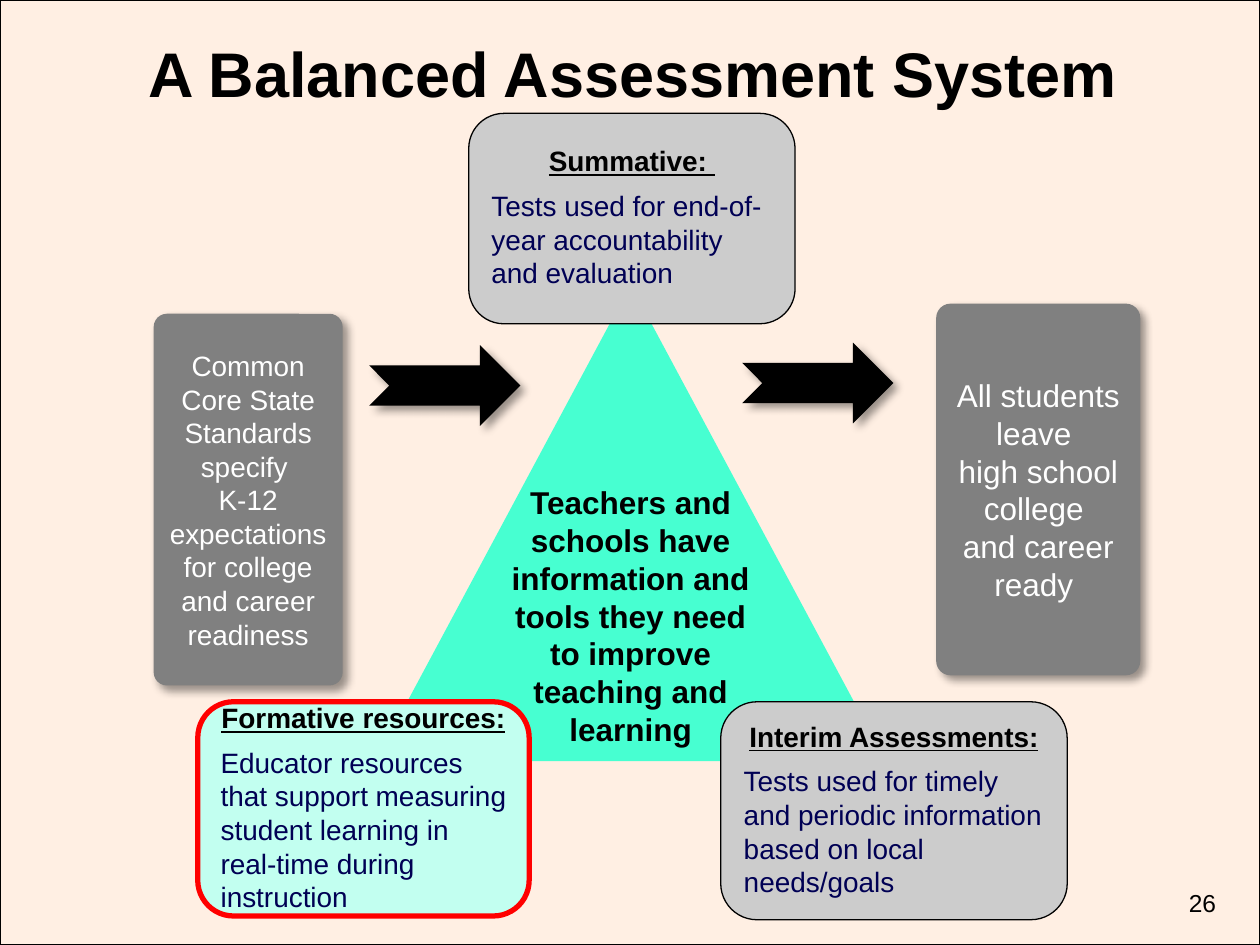
"""Build the balanced assessment system slide."""
from dataclasses import dataclass
from typing import Optional

from lxml.etree import SubElement
from pptx import Presentation
from pptx.dml.color import RGBColor
from pptx.enum.shapes import MSO_SHAPE as Preset
from pptx.enum.text import MSO_ANCHOR as Anchor, PP_ALIGN as Align
from pptx.oxml.ns import qn
from pptx.util import Inches, Pt

BLACK = RGBColor(0x00, 0x00, 0x00)
WHITE = RGBColor(0xFF, 0xFF, 0xFF)
CREAM = RGBColor(0xFF, 0xEF, 0xE3)
GRAY = RGBColor(0x80, 0x80, 0x80)
SILVER = RGBColor(0xCC, 0xCC, 0xCC)
NAVY = RGBColor(0x00, 0x00, 0x54)
TURQUOISE = RGBColor(0x47, 0xFF, 0xD1)
MINT = RGBColor(0xC2, 0xFF, 0xF0)
RED = RGBColor(0xFF, 0x00, 0x00)


@dataclass(frozen=True)
class Box:
    left: float
    top: float
    width: float
    height: float


@dataclass(frozen=True)
class GoalPanel:
    box: Box
    paragraphs: tuple[str, ...]
    size: int
    inset: tuple[float, float]


@dataclass(frozen=True)
class AssessmentCard:
    box: Box
    heading: str
    body: str
    fill: RGBColor = SILVER
    line: RGBColor = BLACK
    line_width: float = 0.75


PANELS = (
    GoalPanel(Box(1.22, 2.49, 1.5, 2.95),
              ("Common Core State Standards specify ",
               "K-12 expectations for college and career readiness"), 16, (0.05, 0.05)),
    GoalPanel(Box(7.43, 2.41, 1.62, 2.95),
              ("All students leave \vhigh school college \vand career ready ",), 18, (0.1, 0.05)),
)
ARROWS = (Box(2.93, 2.74, 1.2, 0.64), Box(5.89, 2.72, 1.2, 0.64))
CARDS = (
    AssessmentCard(Box(3.72, 0.9, 2.59, 1.67), "Summative: ",
                   "Tests used for end-of-year accountability and evaluation"),
    AssessmentCard(Box(5.72, 5.57, 2.75, 1.73), "Interim Assessments:",
                   "Tests used for timely and periodic information based on local needs/goals"),
    AssessmentCard(Box(1.57, 5.57, 2.63, 1.7), "Formative resources:",
                   "Educator resources that support measuring student learning "
                   "in real-time during instruction", MINT, RED, 3),
)


def lengths(box: Box) -> tuple:
    return tuple(Inches(value) for value in (box.left, box.top, box.width, box.height))


def add_shape(slide, preset, box: Box, fill: RGBColor,
              line: Optional[RGBColor] = None, line_width: float = 0.75):
    shape = slide.shapes.add_shape(preset, *lengths(box))
    shape.shadow.inherit = False
    shape.fill.solid()
    shape.fill.fore_color.rgb = fill
    if line is None:
        shape.line.fill.background()
    else:
        shape.line.color.rgb = line
        shape.line.width = Pt(line_width)
    return shape


def add_shadow(shape) -> None:
    effects = shape.element.spPr.find(qn("a:effectLst"))
    shadow = SubElement(effects, qn("a:outerShdw"), blurRad=str(Pt(5)), dist=str(Pt(4)),
                        dir="2700000", algn="tl", rotWithShape="0")
    color = SubElement(shadow, qn("a:srgbClr"), val=str(BLACK))
    SubElement(color, qn("a:alpha"), val="40000")


def set_frame(shape, anchor=Anchor.MIDDLE, inset=(0.1, 0.05), bottom: Optional[float] = None):
    frame = shape.text_frame
    frame.word_wrap = True
    frame.vertical_anchor = anchor
    frame.margin_left = frame.margin_right = Inches(inset[0])
    frame.margin_top = Inches(inset[1])
    frame.margin_bottom = Inches(inset[1] if bottom is None else bottom)
    return frame


def add_text(frame, text: str, *, size: int, color: RGBColor = BLACK, bold: bool = False,
             underline: bool = False, align=Align.CENTER,
             spacing: Optional[float] = None, after: float = 0) -> None:
    paragraph = frame.paragraphs[0]
    if paragraph.runs:
        paragraph = frame.add_paragraph()
    paragraph.text = text
    paragraph.alignment = align
    paragraph.line_spacing = spacing
    paragraph.space_after = Pt(after)
    for run in paragraph.runs:
        font = run.font
        font.name = "Arial"
        font.size = Pt(size)
        font.bold = bold
        font.underline = underline
        font.color.rgb = color


def add_panel(slide, panel: GoalPanel) -> None:
    shape = add_shape(slide, Preset.ROUNDED_RECTANGLE, panel.box, GRAY)
    shape.adjustments[0] = 0.07
    add_shadow(shape)
    frame = set_frame(shape, inset=panel.inset)
    for text in panel.paragraphs:
        add_text(frame, text, size=panel.size, color=WHITE)


def add_card(slide, card: AssessmentCard) -> None:
    shape = add_shape(slide, Preset.ROUNDED_RECTANGLE, card.box, card.fill,
                      card.line, card.line_width)
    frame = set_frame(shape)
    add_text(frame, card.heading, size=16, bold=True, underline=True, spacing=0.9, after=6)
    add_text(frame, card.body, size=16, color=NAVY, align=Align.LEFT)


def main() -> None:
    presentation = Presentation()
    presentation.slide_width, presentation.slide_height = Inches(10), Inches(7.5)
    slide = presentation.slides.add_slide(presentation.slide_layouts[6])
    add_shape(slide, Preset.RECTANGLE, Box(0, 0, 10, 7.5), CREAM, BLACK)

    title = slide.shapes.add_textbox(*lengths(Box(0.98, 0.24, 8.08, 0.67)))
    add_text(set_frame(title), "A Balanced Assessment System", size=36, bold=True)

    for panel in PANELS:
        add_panel(slide, panel)
    for box in ARROWS:
        add_shadow(add_shape(slide, Preset.NOTCHED_RIGHT_ARROW, box, BLACK))

    triangle = add_shape(slide, Preset.ISOSCELES_TRIANGLE, Box(2.98, 2.26, 4.05, 3.78), TURQUOISE)
    add_text(set_frame(triangle, inset=(0, 0), bottom=0.42),
             "Teachers and schools have information and tools they need "
             "to improve teaching and learning", size=18, bold=True)

    number = slide.shapes.add_textbox(*lengths(Box(7.92, 7, 1.83, 0.5)))
    add_text(set_frame(number, anchor=Anchor.TOP), "26", size=14, align=Align.RIGHT)

    for card in CARDS:
        add_card(slide, card)
    presentation.save("out.pptx")


if __name__ == "__main__":
    main()
